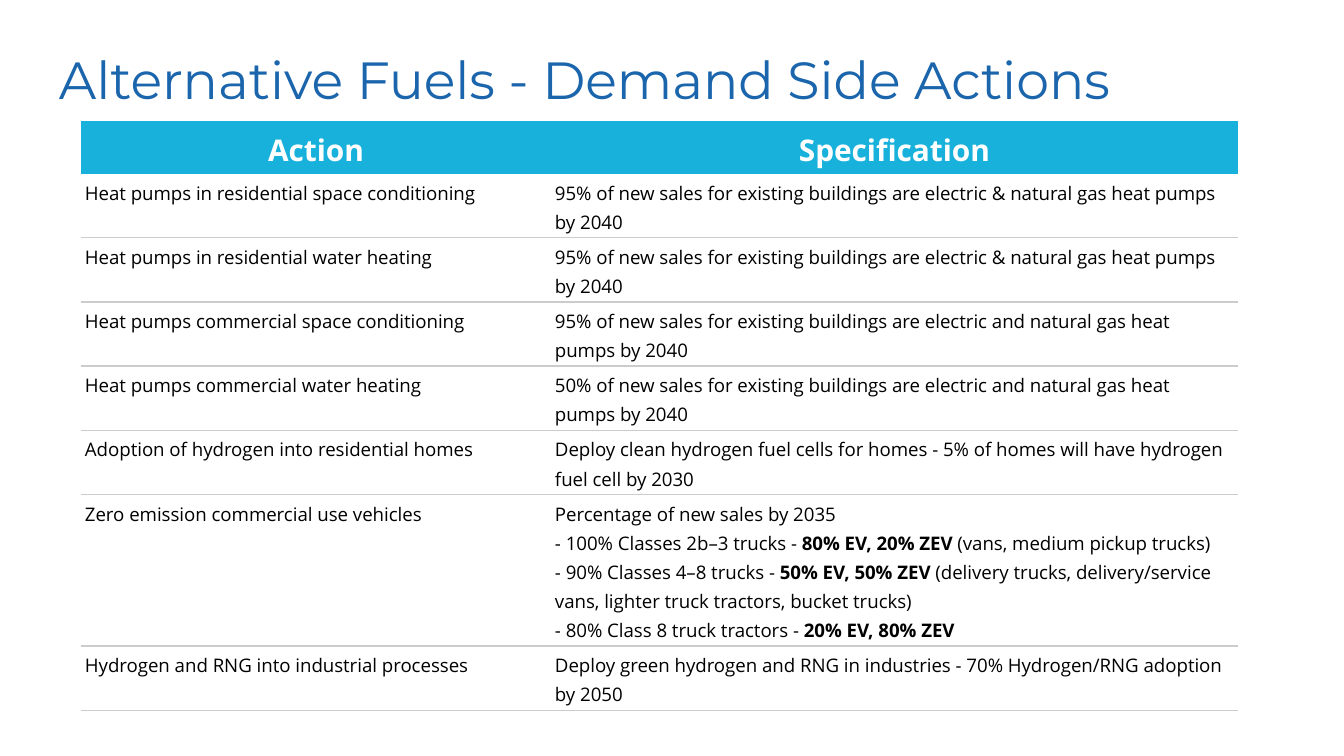
from pptx import Presentation
from pptx import util as u
from pptx.dml.color import RGBColor
from pptx.enum import text
from pptx.oxml import parse_xml
from pptx.oxml.ns import nsdecls

HEADING = "Alternative Fuels - Demand Side Actions"
COLUMNS = ("Action", "Specification")
# Each specification is a list of paragraphs; every second run in one is bold.
ACTIONS = [
    ("Heat pumps in residential space conditioning", 30,
     [("95% of new sales for existing buildings are electric & natural gas heat pumps by 2040",)]),
    ("Heat pumps in residential water heating", 30,
     [("95% of new sales for existing buildings are electric & natural gas heat pumps by 2040",)]),
    ("Heat pumps commercial space conditioning", 30,
     [("95% of new sales for existing buildings are electric and natural gas heat pumps by 2040",)]),
    ("Heat pumps commercial water heating", 30,
     [("50% of new sales for existing buildings are electric and natural gas heat pumps by 2040",)]),
    ("Adoption of hydrogen into residential homes", 52,
     [("Deploy clean hydrogen fuel cells for homes - 5% of homes will have hydrogen fuel cell by 2030",)]),
    ("Zero emission commercial use vehicles", 112,
     [("Percentage of new sales by 2035",),
      ("- 100% Classes 2b–3 trucks - ", "80% EV, 20% ZEV", " (vans, medium pickup trucks)"),
      ("- 90% Classes 4–8 trucks - ", "50% EV, 50% ZEV ",
       "(delivery trucks, delivery/service vans, lighter truck tractors, bucket trucks)"),
      ("- 80% Class 8 truck tractors - ", "20% EV, 80% ZEV")]),
    ("Hydrogen and RNG into industrial processes", 30,
     [("Deploy green hydrogen and RNG in industries - 70% Hydrogen/RNG adoption by 2050",)]),
]

BLUE = RGBColor(0x1B, 0x65, 0xAC)
CYAN = RGBColor(0x17, 0xB1, 0xDC)
GREY = RGBColor(0xCC, 0xCC, 0xCC)
WHITE = RGBColor(0xFF, 0xFF, 0xFF)
BLACK = RGBColor(0, 0, 0)
COLUMN_WIDTHS = (470, 687)
HEADER_HEIGHT = 40
PLAIN_STYLE = "{2D5ABB26-0587-4C30-8999-92F81FD0307C}"


def px(n):
    return u.Emu(round(n * 914400 / 134.4))


def add_run(paragraph, words, font, size, color, bold=False):
    run = paragraph.add_run()
    run.text = words
    run.font.name = font
    run.font.size = u.Pt(size)
    run.font.bold = bold
    run.font.color.rgb = color


def set_margins(holder, across, down):
    holder.margin_left = holder.margin_right = px(across)
    holder.margin_top = holder.margin_bottom = px(down)


def fill_cell(cell, paragraphs, header=False):
    set_margins(cell, 4, 3)
    cell.vertical_anchor = text.MSO_ANCHOR.BOTTOM if header else text.MSO_ANCHOR.TOP
    if header:
        cell.fill.solid()
        cell.fill.fore_color.rgb = CYAN
    else:
        cell.fill.background()
    for i, runs in enumerate(paragraphs):
        paragraph = cell.text_frame.add_paragraph() if i else cell.text_frame.paragraphs[0]
        paragraph.line_spacing = 1.15
        paragraph.alignment = text.PP_ALIGN.CENTER if header else text.PP_ALIGN.LEFT
        for j, words in enumerate(runs):
            add_run(paragraph, words, "Open Sans", 16 if header else 10,
                    WHITE if header else BLACK, header or j % 2 == 1)


def add_rules(cell, sides):
    for i, side in enumerate(sides):
        cell._tc.get_or_add_tcPr().insert(i, parse_xml(
            f'<a:{side} {nsdecls("a")} w="{u.Pt(0.75)}"><a:solidFill>'
            f'<a:srgbClr val="{GREY}"/></a:solidFill></a:{side}>'))


prs = Presentation()
prs.slide_width, prs.slide_height = px(1344), px(756)
slide = prs.slides.add_slide(prs.slide_layouts[5])

heading = slide.shapes.title
heading.left, heading.top, heading.width, heading.height = map(px, (46, 34, 1228, 85))
heading_frame = heading.text_frame
set_margins(heading_frame, 13, 13)
heading_frame.word_wrap = True
heading_frame.auto_size = text.MSO_AUTO_SIZE.NONE
heading_frame.vertical_anchor = text.MSO_ANCHOR.TOP
heading_frame.paragraphs[0].alignment = text.PP_ALIGN.LEFT
add_run(heading_frame.paragraphs[0], HEADING, "Montserrat", 28, BLUE)

row_heights = [HEADER_HEIGHT] + [height for _, height, _ in ACTIONS]
actions = slide.shapes.add_table(
    len(row_heights), len(COLUMNS), px(81), px(121),
    px(sum(COLUMN_WIDTHS)), px(sum(row_heights))).table
actions.horz_banding = False
actions._tbl.tblPr.find("{*}tableStyleId").text = PLAIN_STYLE
for column, width in zip(actions.columns, COLUMN_WIDTHS):
    column.width = px(width)
for row, height in zip(actions.rows, row_heights):
    row.height = px(height)

for c, label in enumerate(COLUMNS):
    fill_cell(actions.cell(0, c), [(label,)], header=True)
for r, (action, _, specification) in enumerate(ACTIONS, 1):
    for c, paragraphs in enumerate(([(action,)], specification)):
        fill_cell(actions.cell(r, c), paragraphs)
        add_rules(actions.cell(r, c), ("lnB",) if r == 1 else ("lnT", "lnB"))

prs.save("out.pptx")
